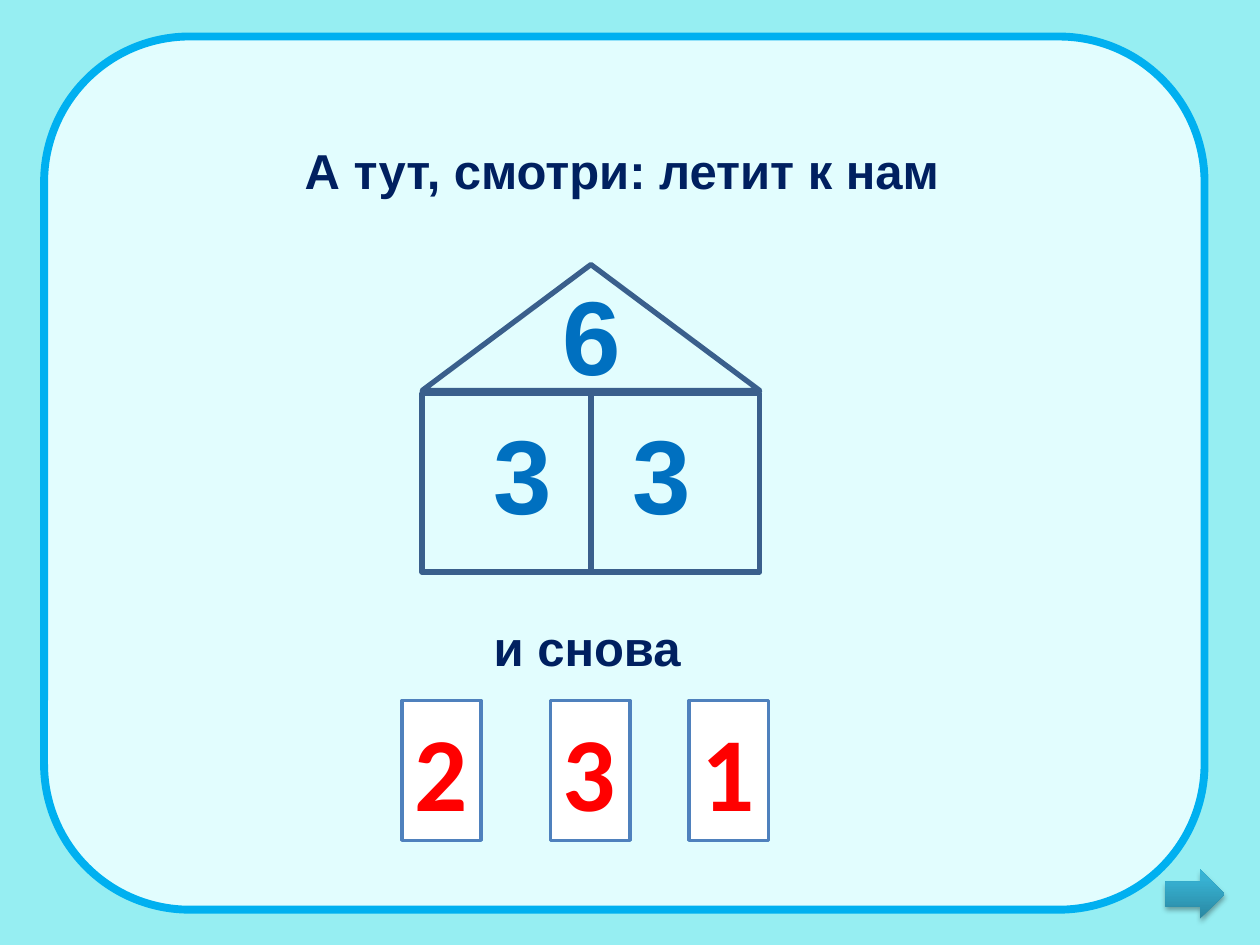
import pptx
import pptx.dml.color
import pptx.enum.shapes
import pptx.enum.text
import pptx.oxml
import pptx.oxml.ns
import pptx.util

Inches = pptx.util.Inches
RGBColor = pptx.dml.color.RGBColor
SHAPES = pptx.enum.shapes.MSO_SHAPE

BACKGROUND = RGBColor(0x96, 0xEE, 0xF2)
PANEL = RGBColor(0xE2, 0xFD, 0xFE)
PANEL_BORDER = RGBColor(0x00, 0xB0, 0xF0)
CAPTION = RGBColor(0x00, 0x20, 0x60)
HOUSE_LINE = RGBColor(0x3A, 0x5F, 0x8C)
HOUSE_DIGIT = RGBColor(0x00, 0x70, 0xC0)
CARD_LINE = RGBColor(0x4F, 0x81, 0xBD)
CARD_DIGIT = RGBColor(0xFF, 0x00, 0x00)
WHITE = RGBColor(0xFF, 0xFF, 0xFF)
ARROW_STOPS = ((0, "2A88A2"), (80, "37B1D2"), (100, "34B4D6"))


def add_shape(page, kind, left, top, width, height, fill=None, line=None, weight=3):
    shape = page.shapes.add_shape(
        kind, Inches(left), Inches(top), Inches(width), Inches(height))
    shape.shadow.inherit = False
    if fill is None:
        shape.fill.background()
    else:
        shape.fill.solid()
        shape.fill.fore_color.rgb = fill
    if line is None:
        shape.line.fill.background()
    else:
        shape.line.color.rgb = line
        shape.line.width = pptx.util.Pt(weight)
    return shape


def write_text(box, text, size=28, font="Arial", color=CAPTION):
    frame = box.text_frame
    frame.word_wrap = False
    frame.auto_size = pptx.enum.text.MSO_AUTO_SIZE.SHAPE_TO_FIT_TEXT
    frame.vertical_anchor = pptx.enum.text.MSO_ANCHOR.TOP
    para = frame.paragraphs[0]
    para.alignment = pptx.enum.text.PP_ALIGN.LEFT
    span = para.add_run()
    span.text = text
    span.font.size = pptx.util.Pt(size)
    span.font.name = font
    span.font.bold = True
    span.font.color.rgb = color


def add_label(page, text, left, top, width, height, **text_format):
    box = page.shapes.add_textbox(
        Inches(left), Inches(top), Inches(width), Inches(height))
    write_text(box, text, **text_format)


def add_house(page, left, top, width, height):
    """A roof with the sum and two rooms with its parts."""
    roof_height, room_width = 1, width / 2
    room_top = top + roof_height + 0.02
    for column in range(2):
        add_shape(page, SHAPES.RECTANGLE, left + column * room_width, room_top,
                  room_width, height - roof_height - 0.02, line=HOUSE_LINE)
    add_shape(page, SHAPES.ISOSCELES_TRIANGLE, left, top, width, roof_height,
              line=HOUSE_LINE)
    digits = (("6", 1.02, 0), ("3", 0.47, 1.1), ("3", 1.57, 1.1))
    for digit, across, down in digits:
        add_label(page, digit, left + across, top + down, 0.67, 1.11,
                  size=60, color=HOUSE_DIGIT)


def add_cards(page, top, width, height):
    for digit, left in (("2", 3.19), ("3", 4.37), ("1", 5.47)):
        card = add_shape(page, SHAPES.RECTANGLE, left, top, width, height,
                         fill=WHITE, line=CARD_LINE, weight=2)
        write_text(card, digit, size=60, font="Calibri", color=CARD_DIGIT)


def add_next_arrow(page, left, top, width, height):
    arrow = add_shape(page, SHAPES.RIGHT_ARROW, left, top, width, height)
    namespace = pptx.oxml.ns.nsdecls("a")
    properties = arrow.fill._xPr

    # Vertical gradient in place of the empty fill
    stops = "".join(
        f'<a:gs pos="{place * 1000}"><a:srgbClr val="{color}"/></a:gs>'
        for place, color in ARROW_STOPS)
    gradient = pptx.oxml.parse_xml(
        f'<a:gradFill {namespace} rotWithShape="1"><a:gsLst>{stops}</a:gsLst>'
        '<a:lin ang="16200000" scaled="0"/></a:gradFill>')
    empty_fill = properties.find(pptx.oxml.ns.qn("a:noFill"))
    properties.replace(empty_fill, gradient)

    # Soft shadow below
    effects = properties.find(pptx.oxml.ns.qn("a:effectLst"))
    effects.append(pptx.oxml.parse_xml(
        f'<a:outerShdw {namespace} blurRad="{pptx.util.Pt(3.1)}" '
        f'dist="{pptx.util.Pt(1.8)}" dir="5400000" rotWithShape="0">'
        '<a:srgbClr val="000000"><a:alpha val="35000"/></a:srgbClr></a:outerShdw>'))


def main():
    deck = pptx.Presentation()
    deck.slide_width, deck.slide_height = Inches(10), Inches(7.5)
    page = deck.slides.add_slide(deck.slide_layouts[6])
    page.background.fill.solid()
    page.background.fill.fore_color.rgb = BACKGROUND

    # Panel
    add_shape(page, SHAPES.ROUNDED_RECTANGLE, 0.35, 0.29, 9.21, 6.93,
              fill=PANEL, line=PANEL_BORDER, weight=4.5)

    # Riddle: captions, number house and cards
    add_label(page, "А тут, смотри: летит к нам", 2.32, 1.07, 5.3, 0.57)
    add_house(page, 3.35, 2.1, 2.68, 2.44)
    add_label(page, "и снова", 3.82, 4.85, 1.7, 0.57)
    add_cards(page, 5.56, 0.63, 1.11)

    # Navigation
    add_next_arrow(page, 9.25, 6.9, 0.47, 0.39)
    deck.save("out.pptx")


if __name__ == "__main__":
    main()
